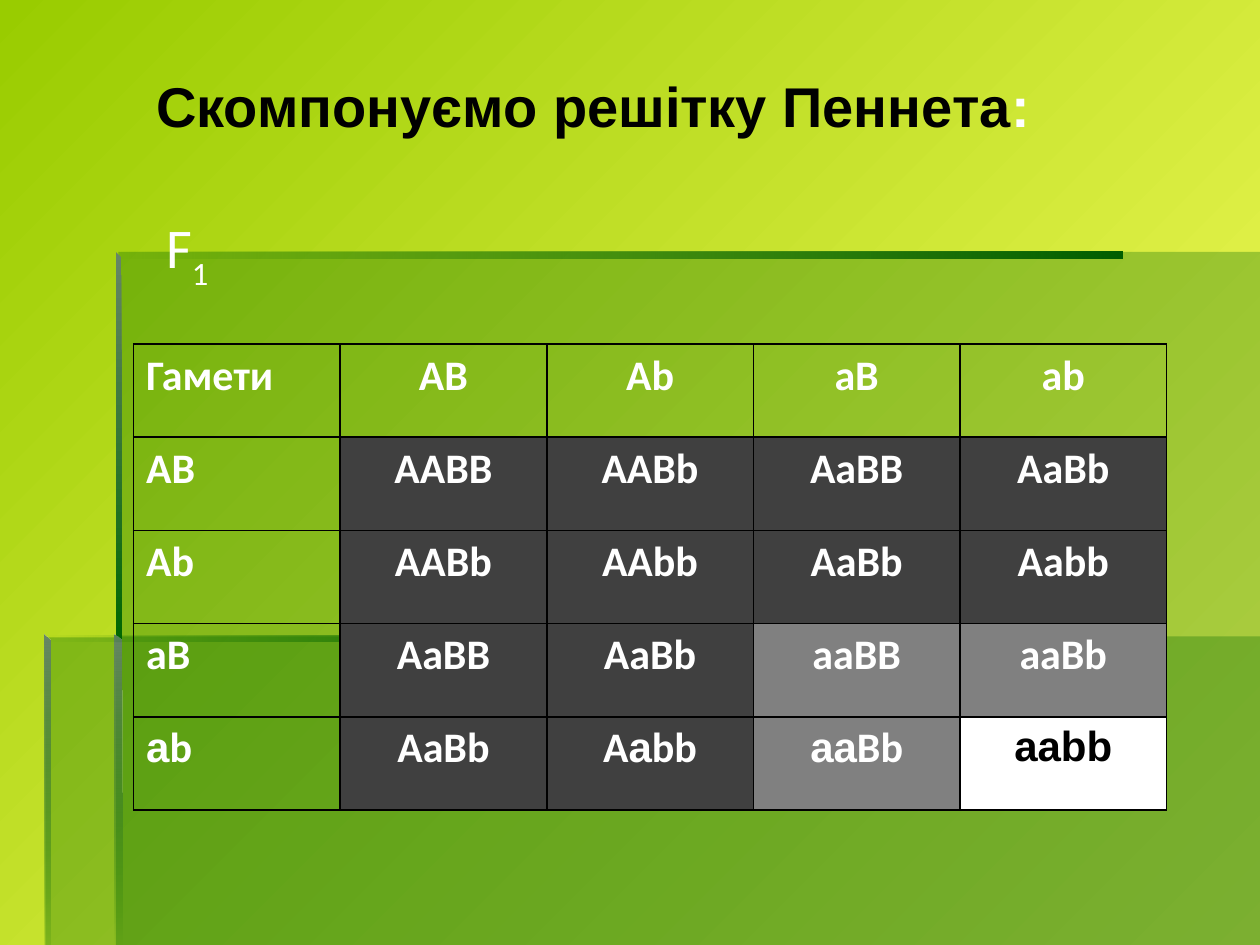
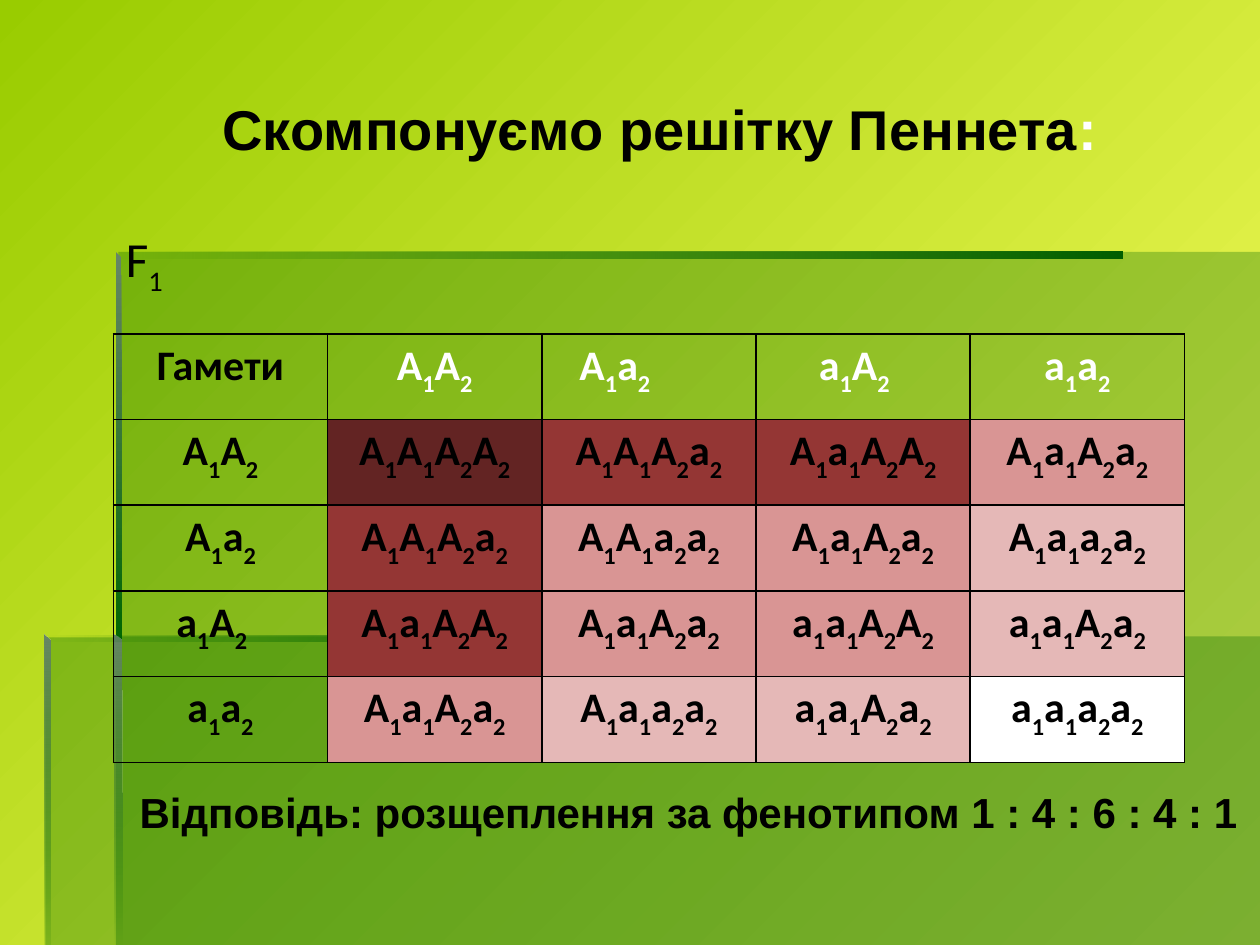
from itertools import groupby

from lxml.etree import SubElement
from pptx import Presentation
from pptx.dml.color import RGBColor
from pptx.enum.text import MSO_ANCHOR, MSO_AUTO_SIZE, PP_ALIGN
from pptx.oxml.ns import qn
from pptx.util import Emu, Pt

PX = 9144  # EMU in one px, 100 px to the inch
WIDTH, HEIGHT = 1000, 750

BLACK, WHITE = "000000", "FFFFFF"
LIME, YELLOW = "99CC00", "FFFF66"
GREEN, DEEP_GREEN, GREY_GREEN = "006600", "005E00", "668666"
DARK_GREY, MID_GREY = "404040", "808080"
# Shades by number of dominant alleles, from none to four
RED_SHADES = [WHITE, "E5B8B7", "D99594", "943634", "632423"]

# Translucent panels: outlines
PANELS = [
    [(92, 505), (92, 750), (1000, 750), (1000, 505)],
    [(94, 506), (36, 506), (36, 750), (1000, 750), (1000, 200), (94, 200)],
]
# Panel edges: outline, gradient angle, (colour, opacity) of both ends
FADE_IN = [(GREEN, 0), (DEEP_GREEN, 100)]
EDGES = [
    ([(92, 200), (92, 205), (891, 205), (891, 200)], 0, FADE_IN),
    ([(92, 200), (92, 510), (97, 510), (96, 204)], 90,
     [(GREY_GREEN, 100), (GREEN, 100)]),
    ([(91, 750), (97, 750), (96, 508), (91, 504)], 90,
     [(GREY_GREEN, 100), (GREEN, 0)]),
    ([(35, 504), (35, 509), (535, 509), (535, 504)], 0, FADE_IN),
    ([(35, 504), (35, 750), (40, 750), (40, 509)], 90,
     [(GREY_GREEN, 100), (GREEN, 10)]),
]


def px(length):
    return Emu(length * PX)


def rgb(value):
    return RGBColor.from_string(value)


def fill_gradient(fill, colors, clockwise):
    fill.gradient()
    fill.gradient_angle = (360 - clockwise) % 360
    for stop, color in zip(fill.gradient_stops, colors):
        stop.color.rgb = rgb(color)


def set_opacity(shape, percents):
    colors = shape.element.spPr.iter(qn("a:srgbClr"))
    for color, percent in zip(list(colors), percents):
        SubElement(color, qn("a:alpha"), val=str(percent * 1000))


def add_outline(slide, points):
    builder = slide.shapes.build_freeform(*points[0], scale=PX)
    builder.add_line_segments(points[1:], close=True)
    outline = builder.convert_to_shape()
    outline.shadow.inherit = False
    outline.line.fill.background()
    return outline


def add_backdrop(slide):
    fill_gradient(slide.background.fill, (LIME, YELLOW), 45)
    for points in PANELS:
        panel = add_outline(slide, points)
        panel.fill.solid()
        panel.fill.fore_color.rgb = rgb(GREEN)
        set_opacity(panel, [30])
    for points, angle, ends in EDGES:
        edge = add_outline(slide, points)
        colors, opacities = zip(*ends)
        fill_gradient(edge.fill, colors, angle)
        set_opacity(edge, opacities)


def write(paragraph, text, size=24, font="Calibri", color=BLACK, bold=True,
          subscripts=False):
    """Append text; with subscripts, every digit is lowered."""
    pieces = [(False, text)]
    if subscripts:
        pieces = [(low, "".join(part)) for low, part in groupby(text, str.isdigit)]
    for low, piece in pieces:
        run = paragraph.add_run()
        run.text = piece
        run.font.size = Pt(size)
        run.font.name = font
        run.font.bold = bold
        run.font.color.rgb = rgb(color)
        if low:
            run._r.get_or_add_rPr().set("baseline", "-30000")


def add_line_of_text(slide, left, top, width, height, align=PP_ALIGN.LEFT,
                     anchor=MSO_ANCHOR.TOP):
    box = slide.shapes.add_textbox(px(left), px(top), px(width), px(height))
    frame = box.text_frame
    frame.word_wrap = False
    frame.auto_size = MSO_AUTO_SIZE.SHAPE_TO_FIT_TEXT
    frame.vertical_anchor = anchor
    frame.paragraphs[0].alignment = align
    return frame.paragraphs[0]


def add_title(slide, left, top, align):
    title = add_line_of_text(slide, left, top, 715, 63, align)
    write(title, "Скомпонуємо решітку Пеннета", size=32, font="Arial")
    write(title, ":", size=32, font="Arial", color=WHITE)


def add_generation(slide, left, top, width, height, size, color):
    label = add_line_of_text(slide, left, top, width, height,
                             anchor=MSO_ANCHOR.MIDDLE)
    write(label, "F1", size=size, color=color, bold=False, subscripts=True)


def add_borders(cell):
    properties = cell._tc.get_or_add_tcPr()
    for side in ("lnL", "lnR", "lnT", "lnB"):
        line = SubElement(properties, qn(f"a:{side}"), w=str(Pt(1)))
        SubElement(SubElement(line, qn("a:solidFill")), qn("a:srgbClr"), val=BLACK)


def cross(mother, father):
    return "".join("".join(sorted(alleles)) for alleles in zip(mother, father))


def punnett_grid(gametes):
    labels = ["".join(gamete) for gamete in gametes]
    rows = [[label] + [cross(mother, father) for father in gametes]
            for label, mother in zip(labels, gametes)]
    return [["Гамети"] + labels] + rows


def add_punnett_table(slide, grid, left, top, column, row, shade):
    """Draw the grid; shade gives an offspring's fill. Return the table."""
    count = len(grid)
    table = slide.shapes.add_table(count, count, px(left), px(top),
                                   px(column * count), px(row * count)).table
    table.first_row = table.horz_banding = False
    for i in range(count):
        table.columns[i].width = px(column)
        table.rows[i].height = px(row)
        for j in range(count):
            cell = table.cell(i, j)
            add_borders(cell)
            cell.text_frame.paragraphs[0].alignment = PP_ALIGN.CENTER
            if i and j:
                cell.fill.solid()
                cell.fill.fore_color.rgb = rgb(shade(grid[i][j]))
            else:
                cell.fill.background()
    return table


def shade_by_dominance(genotype):
    if "A" in genotype:
        return DARK_GREY
    return MID_GREY if "B" in genotype else WHITE


def shade_by_dose(genotype):
    return RED_SHADES[genotype.count("A")]


def build_epistasis_slide(slide):
    add_backdrop(slide)
    add_generation(slide, 122, 169, 106, 63, 32, WHITE)

    grid = punnett_grid(["AB", "Ab", "aB", "ab"])
    grid[0][1] = "АВ"  # Cyrillic letters
    table = add_punnett_table(slide, grid, 106, 273, 164, 74, shade_by_dominance)
    arial_parts = {(4, 0): "a", (4, 2): "a", (4, 3): "aa", (4, 4): "aabb"}
    for i, genotypes in enumerate(grid):
        for j, genotype in enumerate(genotypes):
            paragraph = table.cell(i, j).text_frame.paragraphs[0]
            if j == 0:
                paragraph.alignment = PP_ALIGN.LEFT
            color = BLACK if genotype == "aabb" else WHITE
            before, arial, after = genotype, "", ""
            if (i, j) in arial_parts:
                before, arial, after = genotype.partition(arial_parts[i, j])
            for part, font in ((before, "Calibri"), (arial, "Arial"), (after, "Calibri")):
                if part:
                    write(paragraph, part, font=font, color=color)

    add_title(slide, 114, 52, PP_ALIGN.LEFT)


def build_polymery_slide(slide):
    add_backdrop(slide)

    gametes = [("A1", "A2"), ("A1", "a2"), ("a1", "A2"), ("a1", "a2")]
    grid = punnett_grid(gametes)
    table = add_punnett_table(slide, grid, 90, 265, 170, 68, shade_by_dose)
    for i, genotypes in enumerate(grid):
        for j, genotype in enumerate(genotypes):
            color = WHITE if i == 0 and j else BLACK
            write(table.cell(i, j).text_frame.paragraphs[0], genotype,
                  color=color, subscripts=True)
    # Labels that sit left of the cell's centre
    for (i, j), shift in {(0, 2): 54, (0, 3): 14, (3, 0): 14}.items():
        table.cell(i, j).margin_right = px(10 + shift)

    add_generation(slide, 90, 180, 51, 57, 28, BLACK)
    add_title(slide, 166, 70, PP_ALIGN.CENTER)
    answer = add_line_of_text(slide, 101, 619, 894, 50)
    write(answer, "Відповідь: розщеплення за фенотипом 1 : 4 : 6 : 4 : 1",
          font="Arial")


def main():
    deck = Presentation()
    deck.slide_width, deck.slide_height = px(WIDTH), px(HEIGHT)
    blank = deck.slide_layouts[6]
    for build in (build_epistasis_slide, build_polymery_slide):
        build(deck.slides.add_slide(blank))
    deck.save("out.pptx")


if __name__ == "__main__":
    main()
